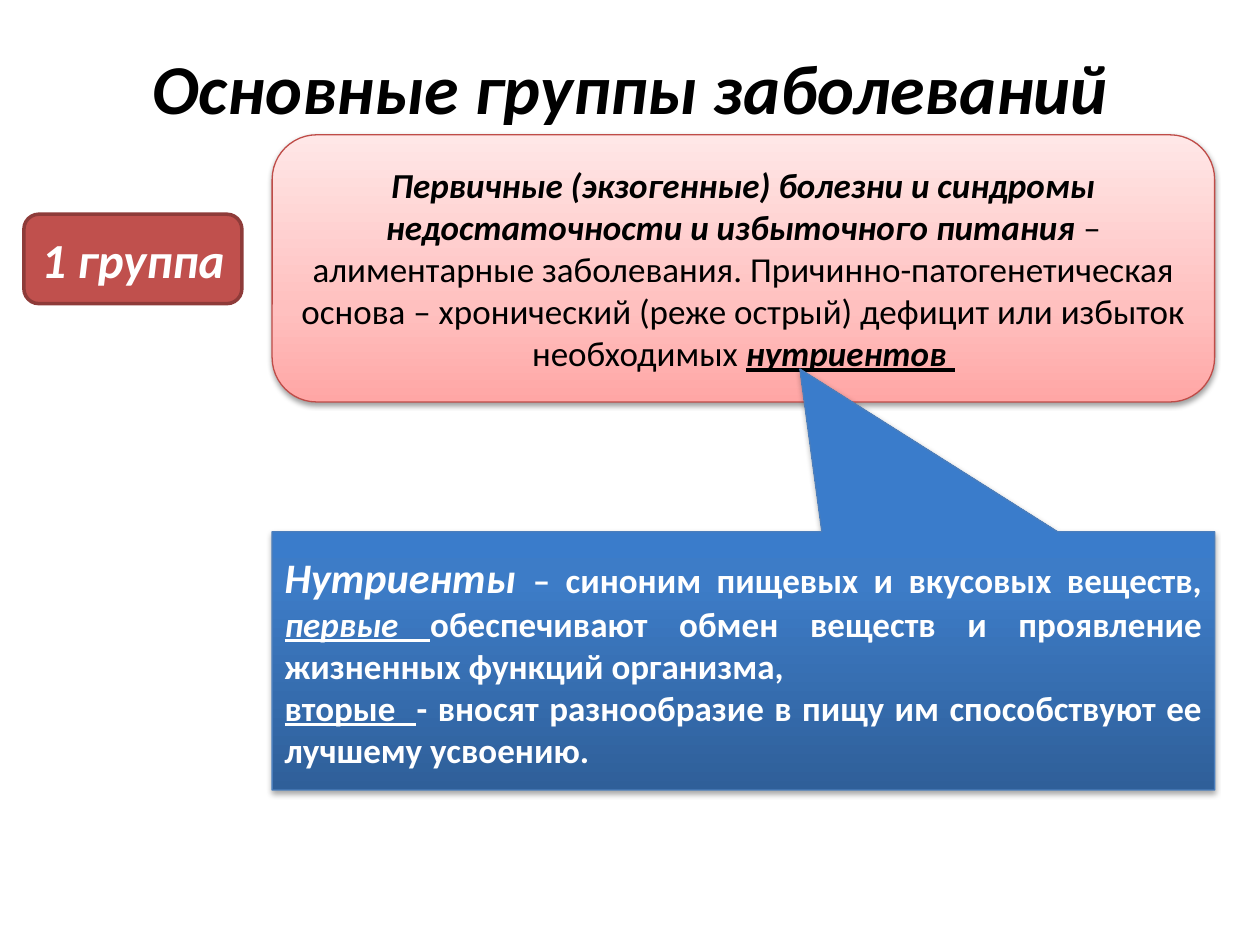
from copy import deepcopy

from lxml.etree import SubElement
from pptx import Presentation
from pptx.dml.color import RGBColor
from pptx.enum.shapes import MSO_SHAPE
from pptx.enum.text import MSO_ANCHOR, PP_ALIGN
from pptx.oxml.ns import qn
from pptx.util import Inches, Pt

COLORS = {
    "black": "000000", "white": "FFFFFF",
    "badge": "C0504D", "badge_line": "8E3B39",
    "pink_line": "BF4C48", "blue_line": "4B7EBC",
}
PINK = [(0, "FFA6A5"), (0.35, "FFC0BF"), (1, "FFE7E7")]
BLUE = [(0, "2F5F99"), (0.8, "3D7CC7"), (1, "3A7CCB")]
COLS, ROWS = 100, 75


def rgb(name):
    """Return the colour for a palette name."""
    return RGBColor.from_string(COLORS[name])


def add_run(p, text, size=20, color="black", bold=False, italic=False, underline=False):
    """Add one formatted run to a paragraph."""
    r = p.add_run()
    r.text = text
    f = r.font
    f.name, f.size, f.color.rgb = "Calibri", Pt(size), rgb(color)
    f.bold, f.italic, f.underline = bold, italic, underline


class Deck:
    """Hold the grid, the style and the current slide."""

    def __init__(self):
        """Start a presentation with one title-only slide."""
        self.prs = Presentation()
        self.prs.slide_width, self.prs.slide_height = Inches(10), Inches(7.5)
        self.s = self.prs.slides.add_slide(self.prs.slide_layouts[5])

    def box(self, col, row, cols, rows):
        """Convert grid cells to left, top, width and height."""
        w, h = self.prs.slide_width / COLS, self.prs.slide_height / ROWS
        return [round(v) for v in (col * w, row * h, cols * w, rows * h)]

    def add_text(self, sp, paragraphs, align=PP_ALIGN.CENTER, **base):
        """Fill a shape with paragraphs of (text, format) runs."""
        tf = sp.text_frame
        tf.word_wrap, tf.vertical_anchor = True, MSO_ANCHOR.MIDDLE
        for i, runs in enumerate(paragraphs):
            p = tf.paragraphs[0] if i == 0 else tf.add_paragraph()
            p.alignment = align
            for text, style in runs:
                add_run(p, text, **{**base, **style})

    def title(self, cells, text):
        """Place and format the title placeholder."""
        sp = self.s.shapes.title
        sp.left, sp.top, sp.width, sp.height = self.box(*cells)
        self.add_text(sp, [[(text, {})]], size=40, bold=True, italic=True)

    def shape(self, kind, cells, line, width, fill=None, adjust=()):
        """Add a preset shape with an outline and an optional solid fill."""
        sp = self.s.shapes.add_shape(kind, *self.box(*cells))
        sp.shadow.inherit = False
        sp.line.color.rgb, sp.line.width = rgb(line), Pt(width)
        for i, value in enumerate(adjust):
            sp.adjustments[i] = value
        if fill:
            sp.fill.solid()
            sp.fill.fore_color.rgb = rgb(fill)
        return sp

    def panel(self, kind, cells, line, stops, alpha, adjust=()):
        """Add a shape with an upward gradient and a soft shadow."""
        sp = self.shape(kind, cells, line, 0.75, adjust=adjust)
        sp.fill.gradient()
        sp.fill.gradient_angle = 90
        gs = sp._element.spPr.find(".//" + qn("a:gsLst"))
        gs.append(deepcopy(gs[0]))
        for stop, (position, color) in zip(sp.fill.gradient_stops, stops):
            stop.position, stop.color.rgb = position, RGBColor.from_string(color)
        effects = sp._element.spPr.find(qn("a:effectLst"))
        shadow = SubElement(effects, qn("a:outerShdw"), blurRad=str(Pt(3.1)),
                            dist=str(Pt(1.7)), dir="5400000", rotWithShape="0")
        color = SubElement(shadow, qn("a:srgbClr"), val=COLORS["black"])
        SubElement(color, qn("a:alpha"), val=str(alpha * 1000))
        return sp


def main():
    """Build and save the slide."""
    d = Deck()
    d.title((5, 3, 90, 7.7), "Основные группы заболеваний")

    badge = d.shape(MSO_SHAPE.ROUNDED_RECTANGLE, (1.9, 17, 17.3, 7.1),
                    "badge_line", 2, fill="badge")
    d.add_text(badge, [[("1 группа ", {})]], size=28, color="white",
               bold=True, italic=True)

    strong = dict(bold=True, italic=True)
    group = d.panel(MSO_SHAPE.ROUNDED_RECTANGLE, (21.6, 10.7, 74.8, 21.2),
                    "pink_line", PINK, 38)
    d.add_text(group, [[
        ("Первичные (экзогенные) болезни и синдромы недостаточности "
         "и избыточного питания ", strong),
        ("– алиментарные заболевания. Причинно-патогенетическая основа – "
         "хронический (реже острый) дефицит или избыток необходимых ", {}),
        ("нутриентов", dict(strong, underline=True)),
        (" ", dict(underline=True)),
    ]])

    callout = d.panel(MSO_SHAPE.RECTANGULAR_CALLOUT, (21.6, 42.2, 74.8, 20.5),
                      "blue_line", BLUE, 35, adjust=(0.06, -1.13))
    d.add_text(callout, [
        [("Нутриенты ", dict(size=24, italic=True)),
         ("– синоним пищевых и вкусовых веществ, ", {}),
         ("первые ", dict(italic=True, underline=True)),
         ("обеспечивают обмен веществ и проявление жизненных функций организма, ", {})],
        [("вторые  ", dict(underline=True)),
         ("- вносят разнообразие в пищу им способствуют ее лучшему усвоению.", {})],
    ], align=PP_ALIGN.JUSTIFY, color="white", bold=True)

    d.prs.save("out.pptx")


if __name__ == "__main__":
    main()
